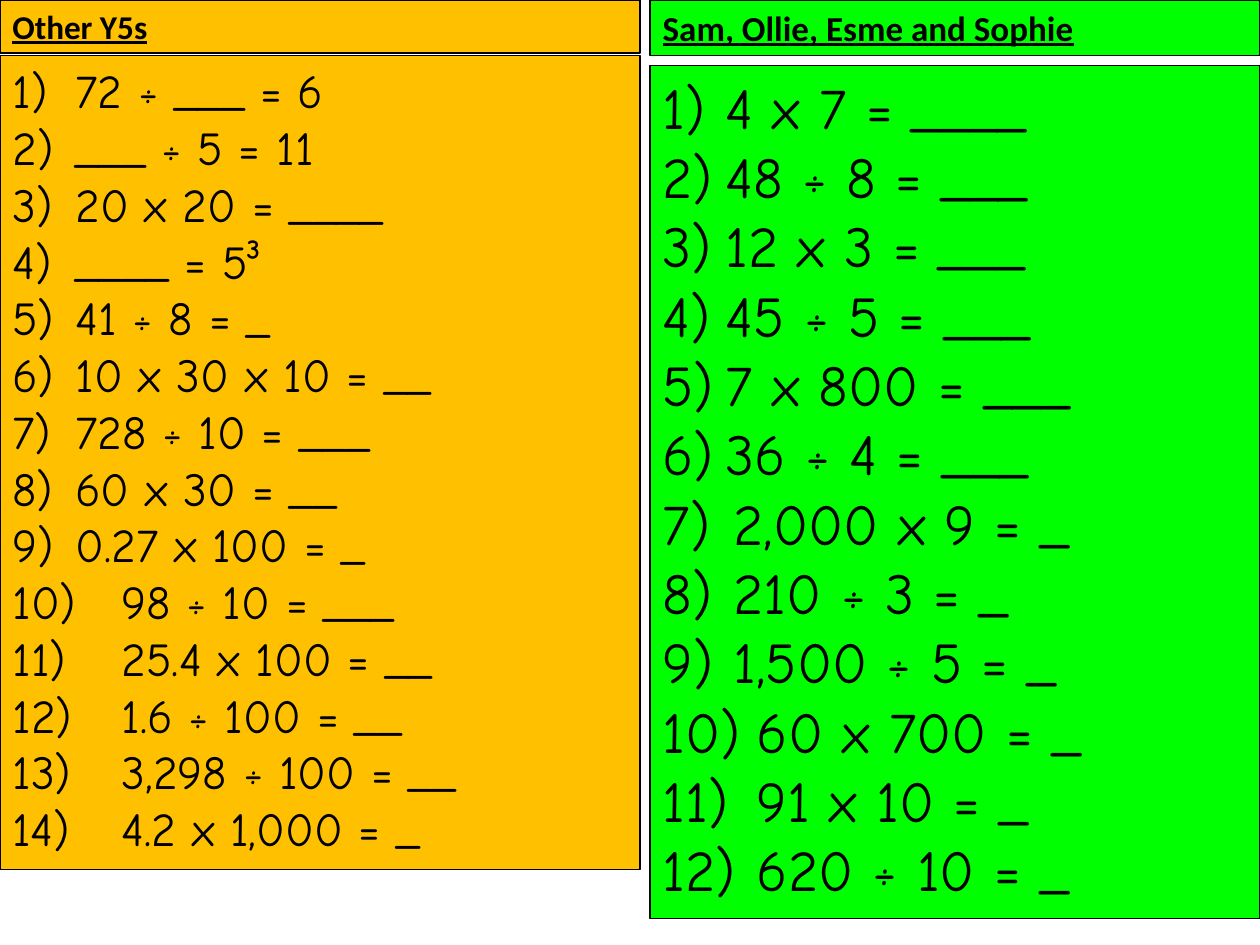
from lxml import etree
from pptx import Presentation
from pptx.dml.color import RGBColor
from pptx.enum.shapes import MSO_SHAPE
from pptx.enum.text import MSO_ANCHOR, MSO_AUTO_SIZE, PP_ALIGN
from pptx.oxml.ns import qn
from pptx.util import Cm, Pt

RECTANGLE = MSO_SHAPE.RECTANGLE
TOP = MSO_ANCHOR.TOP
GROW = MSO_AUTO_SIZE.SHAPE_TO_FIT_TEXT
LEFT = PP_ALIGN.LEFT

BLACK = RGBColor(0x00, 0x00, 0x00)
ORANGE = RGBColor(0xFF, 0xC0, 0x00)
GREEN = RGBColor(0x00, 0xFF, 0x00)

# Each group: first number, hanging indent in cm, questions
Y5_GROUPS = [
    (1, 1.27, ["72 ÷ ___ = 6", "___ ÷ 5 = 11", "20 x 20 = ____",
               "____ = 5³", "41 ÷ 8 = _", "10 x 30 x 10 = __",
               "728 ÷ 10 = ___", "60 x 30 = __", "0.27 x 100 = _"]),
    (10, 2.2, ["98 ÷ 10 = ___", "25.4 x 100 = __", "1.6 ÷ 100 = __",
               "3,298 ÷ 100 = __", "4.2 x 1,000 = _"]),
]
NAMED_GROUPS = [
    (1, 1.27, ["4 x 7 = ____", "48 ÷ 8 = ___", "12 x 3 = ___",
               "45 ÷ 5 = ___", "7 x 800 = ___", "36 ÷ 4 = ___"]),
    (7, 1.43, ["2,000 x 9 = _", "210 ÷ 3 = _", "1,500 ÷ 5 = _"]),
    (10, 1.9, ["60 x 700 = _", "91 x 10 = _", "620 ÷ 10 = _"]),
]


def add_panel(page, left, top, width, height, color):
    panel = page.shapes.add_shape(RECTANGLE, Cm(left), Cm(top), Cm(width), Cm(height))
    panel.shadow.inherit = False
    panel.fill.solid()
    panel.fill.fore_color.rgb = color
    panel.line.color.rgb = BLACK
    panel.line.width = Pt(1)
    frame = panel.text_frame
    frame.word_wrap = True
    frame.auto_size = GROW
    frame.vertical_anchor = TOP
    return frame


def write(para, text, *, size, font, bold=False, underline=False):
    para.alignment = LEFT
    span = para.add_run()
    span.text = text
    span.font.size = Pt(size)
    span.font.name = font
    span.font.color.rgb = BLACK
    span.font.bold = bold
    span.font.underline = underline


def number(para, start, indent):
    """Give the paragraph a hanging automatic number such as 1)."""
    properties = para._p.get_or_add_pPr()
    properties.set("marL", str(Cm(indent)))
    properties.set("indent", str(-Cm(indent)))
    bullet = etree.SubElement(properties, qn("a:buAutoNum"), type="arabicParenR")
    if start > 1:
        bullet.set("startAt", str(start))


def add_question_column(page, left, width, color, heading, heading_size,
                        heading_height, list_top, list_height, groups, size):
    """Place a heading bar and the numbered questions below it."""
    bar = add_panel(page, left, 0, width, heading_height, color)
    write(bar.paragraphs[0], heading, size=heading_size, font="Calibri",
          bold=True, underline=True)

    frame = add_panel(page, left, list_top, width, list_height, color)
    para = frame.paragraphs[0]
    for start, indent, questions in groups:
        for question in questions:
            if para.runs:
                para = frame.add_paragraph()
            write(para, question, size=size, font="Comic Neue")
            number(para, start, indent)


def main():
    deck = Presentation()
    deck.slide_width, deck.slide_height = Cm(25.4), Cm(19.05)
    blank_layout = deck.slide_layouts[6]
    page = deck.slides.add_slide(blank_layout)
    add_question_column(page, 0, 12.9, ORANGE, "Other Y5s", 19,
                        1.07, 1.12, 16.41, Y5_GROUPS, 27)
    add_question_column(page, 13.11, 12.29, GREEN, "Sam, Ollie, Esme and Sophie", 20,
                        1.12, 1.32, 17.2, NAMED_GROUPS, 33)
    deck.save("out.pptx")


if __name__ == "__main__":
    main()
